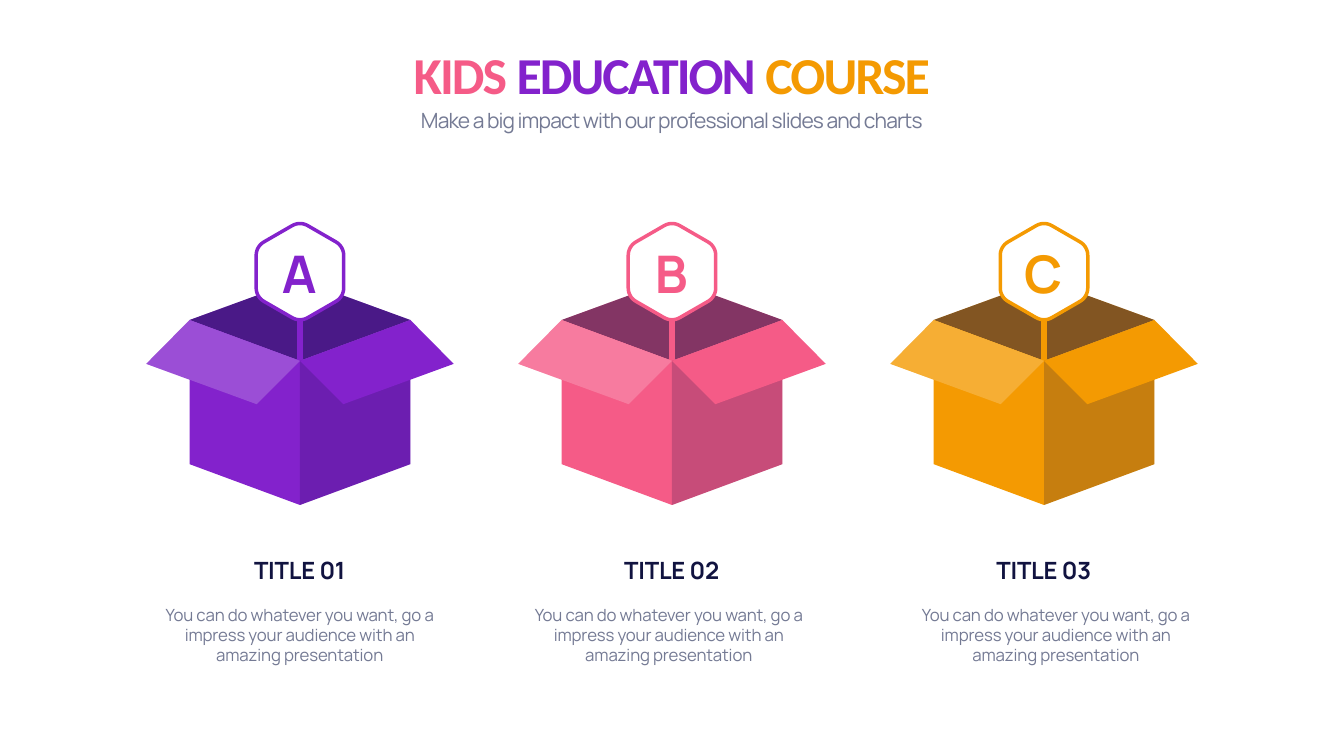
from math import cos, radians, sin

from lxml import etree
from pptx import Presentation
from pptx.dml.color import RGBColor
from pptx.enum.text import MSO_ANCHOR, MSO_AUTO_SIZE, PP_ALIGN
from pptx.oxml.ns import qn
from pptx.util import Inches, Pt

CENTER = PP_ALIGN.CENTER
TOP, MIDDLE, BOTTOM = MSO_ANCHOR.TOP, MSO_ANCHOR.MIDDLE, MSO_ANCHOR.BOTTOM
GROW = MSO_AUTO_SIZE.SHAPE_TO_FIT_TEXT

COLORS = {
    "purple": "8322CC",
    "pink": "F55B87",
    "orange": "F49A02",
    "shade": "121143",
    "white": "FFFFFF",
    "heading": "111340",
    "gray": "747A94",
}


def draw_polygon(shapes, center_x, points, color, opacity=100, outline=None):
    corners = [(Inches(center_x + x), Inches(y)) for x, y in points]
    builder = shapes.build_freeform(*corners[0])
    builder.add_line_segments(corners[1:], close=True)
    face = builder.convert_to_shape()
    face.shadow.inherit = False
    face.fill.solid()
    face.fill.fore_color.rgb = RGBColor.from_string(COLORS[color])
    if opacity < 100:
        rgb = face.element.spPr.find(qn("a:solidFill")).find(qn("a:srgbClr"))
        etree.SubElement(rgb, qn("a:alpha")).set("val", str(opacity * 1000))
    if outline:
        face.line.color.rgb = RGBColor.from_string(COLORS[outline])
        face.line.width = Pt(5)
    else:
        face.line.fill.background()


def write_text(colored_parts, *, box, size, font="Manrope", bold=False,
               tracking=0, anchor=TOP, line_spacing=None, holder=None):
    left, top, width, height = map(Inches, box)
    if holder is None:
        holder = slide.shapes.add_textbox(left, top, width, height)
    holder.left, holder.top, holder.width, holder.height = left, top, width, height
    frame = holder.text_frame
    frame.word_wrap = True
    frame.auto_size = GROW
    frame.vertical_anchor = anchor
    paragraph = frame.paragraphs[0]
    paragraph.alignment = CENTER
    if line_spacing:
        paragraph.line_spacing = Pt(line_spacing)
    for text, color in colored_parts:
        run = paragraph.add_run()
        run.text = text
        run.font.name = font
        run.font.size = Pt(size)
        run.font.bold = bold
        run.font.color.rgb = RGBColor.from_string(COLORS[color])
        run._r.get_or_add_rPr().set("spc", str(round(tracking * 100)))


prs = Presentation()
prs.slide_width = Inches(26.66)
prs.slide_height = Inches(15)
slide = prs.slides.add_slide(prs.slide_layouts[5])

write_text([("KIDS ", "pink"), ("EDUCATION", "purple"), (" COURSE", "orange")],
           holder=slide.shapes.title, box=(1.66, 0.76, 23.33, 1.38), size=74,
           font="Calibri", bold=True, tracking=-2.9, anchor=BOTTOM, line_spacing=94)
write_text([("Make a big impact with our professional slides and charts", "gray")],
           box=(1.66, 2.01, 23.33, 0.66), size=30, tracking=-1.2, line_spacing=42)

opening = [(0, 5.55), (-2.19, 6.35), (0, 7.16), (2.19, 6.35)]
back_edge = [(0.06, 7.4), (-0.06, 7.4), (-0.06, 6.35), (0.06, 6.35)]
right_wall = [(0, 10.02), (2.19, 9.21), (2.19, 6.35), (0, 7.16)]
walls = right_wall + [(-2.19, 6.35), (-2.19, 9.21)]
right_flap = [(0, 7.16), (0.86, 8.02), (3.05, 7.22), (2.19, 6.35)]
left_flap = [(-x, y) for x, y in right_flap]

badge_middle = 5.39
curve_steps = 8
rounded_tip = []
for step in range(curve_steps + 1):
    t = step / curve_steps
    weights = ((1 - t) ** 3, 3 * t * (1 - t) ** 2, 3 * t ** 2 * (1 - t), t ** 3)
    controls = ((-0.16, -0.91), (-0.06, -0.97), (0.06, -0.97), (0.16, -0.91))
    rounded_tip.append([sum(w * c[axis] for w, c in zip(weights, controls))
                        for axis in (0, 1)])
badge = [(x * cos(turn) - y * sin(turn), badge_middle + x * sin(turn) + y * cos(turn))
         for turn in map(radians, range(0, 360, 60)) for x, y in rounded_tip]

courses = [("A", "TITLE 01", "purple", 3.13),
           ("B", "TITLE 02", "pink", 10.45),
           ("C", "TITLE 03", "orange", 18.13)]
description = ("You can do whatever you want, go a impress your audience "
               "with an amazing presentation")

for column, (letter, heading, color, description_left) in enumerate(courses):
    center = 5.95 + 7.38 * column
    carton = slide.shapes.add_group_shape().shapes
    for points, fill, opacity in [
        (opening, color, 100), (opening, "shade", 50),
        (back_edge, color, 100),
        (walls, color, 100), (right_wall, "shade", 20),
        (right_flap, color, 100),
        (left_flap, color, 100), (left_flap, "white", 20),
    ]:
        draw_polygon(carton, center, points, fill, opacity)
    draw_polygon(slide.shapes, center, badge, "white", outline=color)
    write_text([(letter, color)], box=(center - 0.68, 4.73, 1.33, 1.35), size=74,
               bold=True, tracking=-2.9, anchor=MIDDLE)
    write_text([(heading, "heading")], box=(center - 2.55, 10.98, 5.09, 0.67), size=34,
               bold=True, tracking=-0.3, anchor=BOTTOM)
    write_text([(description, "gray")], box=(description_left, 11.95, 5.63, 1.31),
               size=24, tracking=-0.2)

prs.save("out.pptx")
